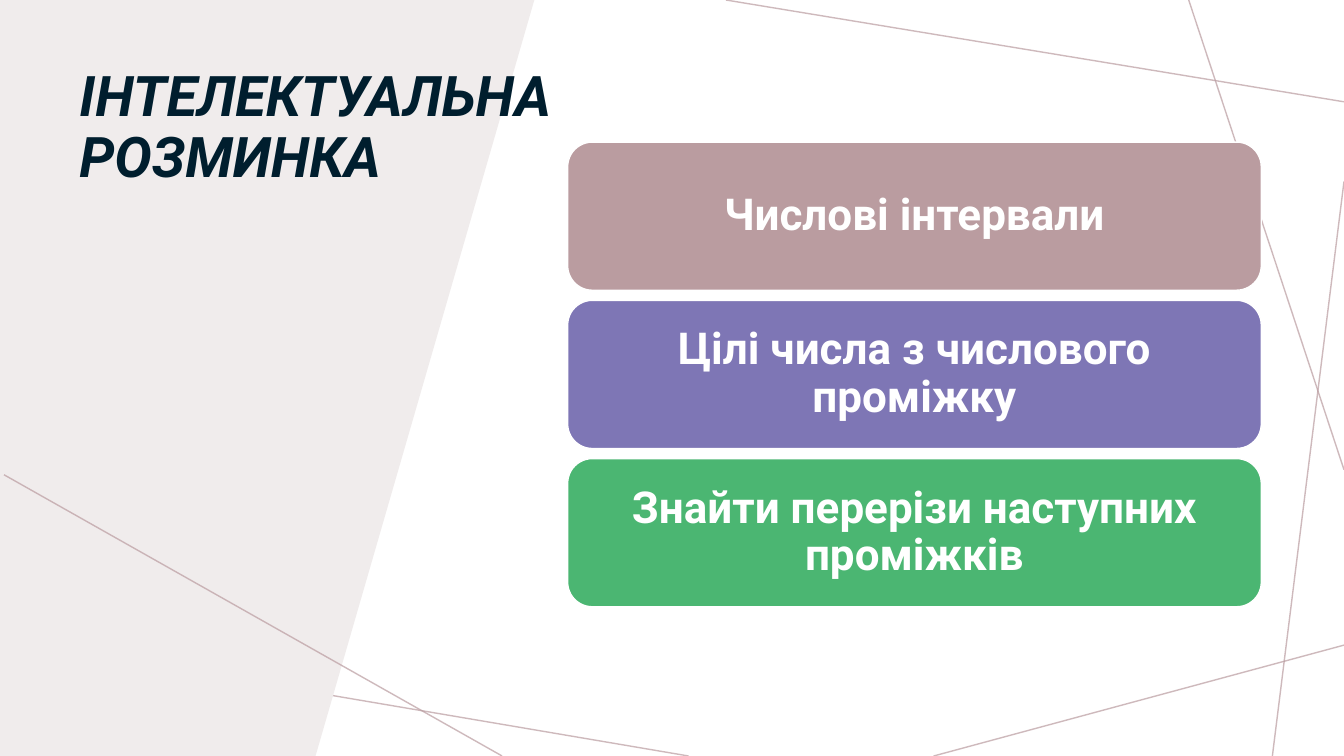
import pptx
import pptx.util
import pptx.dml.color
import pptx.enum.shapes
import pptx.enum.text
import pptx.oxml
import pptx.oxml.ns
from lxml import etree

Inches = pptx.util.Inches
Pt = pptx.util.Pt
RGBColor = pptx.dml.color.RGBColor
Align = pptx.enum.text.PP_ALIGN
Anchor = pptx.enum.text.MSO_ANCHOR
qn = pptx.oxml.ns.qn

WHITE = RGBColor(0xFF, 0xFF, 0xFF)
NAVY = RGBColor(0x00, 0x1E, 0x2E)
PALE = RGBColor(0xF0, 0xEC, 0xEC)
MAUVE = RGBColor(0xBA, 0x9C, 0xA0)
VIOLET = RGBColor(0x7E, 0x76, 0xB5)
GREEN = RGBColor(0x4B, 0xB6, 0x72)

BACK = [
    (6.83, 7.5, 0, 6.34),
    (13.33, 6.4, 9.26, 7.5),
    (13.33, 1.8, 12.62, 7.5),
    (13.33, 4.66, 11.79, 0),
    (13.33, 1.01, 7.2, 0),
]
FRONT = (0.04, 4.71, 4.98, 7.5)
PANEL = [(0, 0), (5.3, 0), (3.13, 7.5), (0, 7.5)]
TASKS = [
    ("Числові інтервали", MAUVE),
    ("Цілі числа з числового проміжку", VIOLET),
    ("Знайти перерізи наступних проміжків", GREEN),
]
LEFT, TOP, WIDE, HIGH, GAP = 5.63, 1.41, 6.88, 1.47, 0.1


class Page:
    font = "Roboto"

    def __init__(self, slide):
        self.shapes = slide.shapes

    def line(self, x1, y1, x2, y2):
        """Draw a thin mauve line at 70% opacity."""
        rule = self.shapes.add_connector(
            pptx.enum.shapes.MSO_CONNECTOR.STRAIGHT,
            Inches(x1), Inches(y1), Inches(x2), Inches(y2))
        rule.line.width = Pt(1)
        rule.line.color.rgb = MAUVE
        props = rule._element.spPr
        tint = props.find(".//" + qn("a:srgbClr"))
        etree.SubElement(tint, qn("a:alpha")).set("val", "70000")
        etree.SubElement(props, qn("a:effectLst"))

    def panel(self, points, color):
        first, *rest = [(Inches(x), Inches(y)) for x, y in points]
        pen = self.shapes.build_freeform(*first)
        pen.add_line_segments(rest, close=True)
        shape = pen.convert_to_shape()
        shape.shadow.inherit = False
        shape.fill.solid()
        shape.fill.fore_color.rgb = color
        shape.line.fill.background()

    def label(self, shape, text, size, color, align, anchor, italic=False):
        frame = shape.text_frame
        frame.word_wrap = True
        frame.vertical_anchor = anchor
        para = frame.paragraphs[0]
        para.alignment = align
        para.line_spacing = 0.9
        run = para.add_run()
        run.text = text
        run.font.name = self.font
        run.font.size = Pt(size)
        run.font.bold = True
        run.font.italic = italic
        run.font.color.rgb = color

    def title(self, text, x, y, w, h):
        box = self.shapes.add_textbox(Inches(x), Inches(y), Inches(w), Inches(h))
        self.label(box, text, 40, NAVY, Align.LEFT, Anchor.TOP, italic=True)

    def card(self, text, color, x, y, w, h):
        shape = self.shapes.add_shape(
            pptx.enum.shapes.MSO_SHAPE.ROUNDED_RECTANGLE,
            Inches(x), Inches(y), Inches(w), Inches(h))
        shape.shadow.inherit = False
        shape.fill.solid()
        shape.fill.fore_color.rgb = color
        shape.line.color.rgb = WHITE
        shape.line.width = Pt(1)
        frame = shape.text_frame
        frame.margin_left = frame.margin_right = Inches(0.11)
        frame.margin_top = frame.margin_bottom = Inches(0.11)
        self.label(shape, text, 31.4, WHITE, Align.CENTER, Anchor.MIDDLE)


def main():
    deck = pptx.Presentation()
    deck.slide_width = Inches(13.33)
    deck.slide_height = Inches(7.5)
    page = Page(deck.slides.add_slide(deck.slide_layouts[6]))
    for ends in BACK:
        page.line(*ends)
    page.panel(PANEL, PALE)
    page.title("ІНТЕЛЕКТУАЛЬНА РОЗМИНКА", 0.69, 0.63, 4.94, 1.47)
    page.line(*FRONT)
    for row, (text, color) in enumerate(TASKS):
        page.card(text, color, LEFT, TOP + row * (HIGH + GAP), WIDE, HIGH)
    deck.save("out.pptx")


if __name__ == "__main__":
    main()
